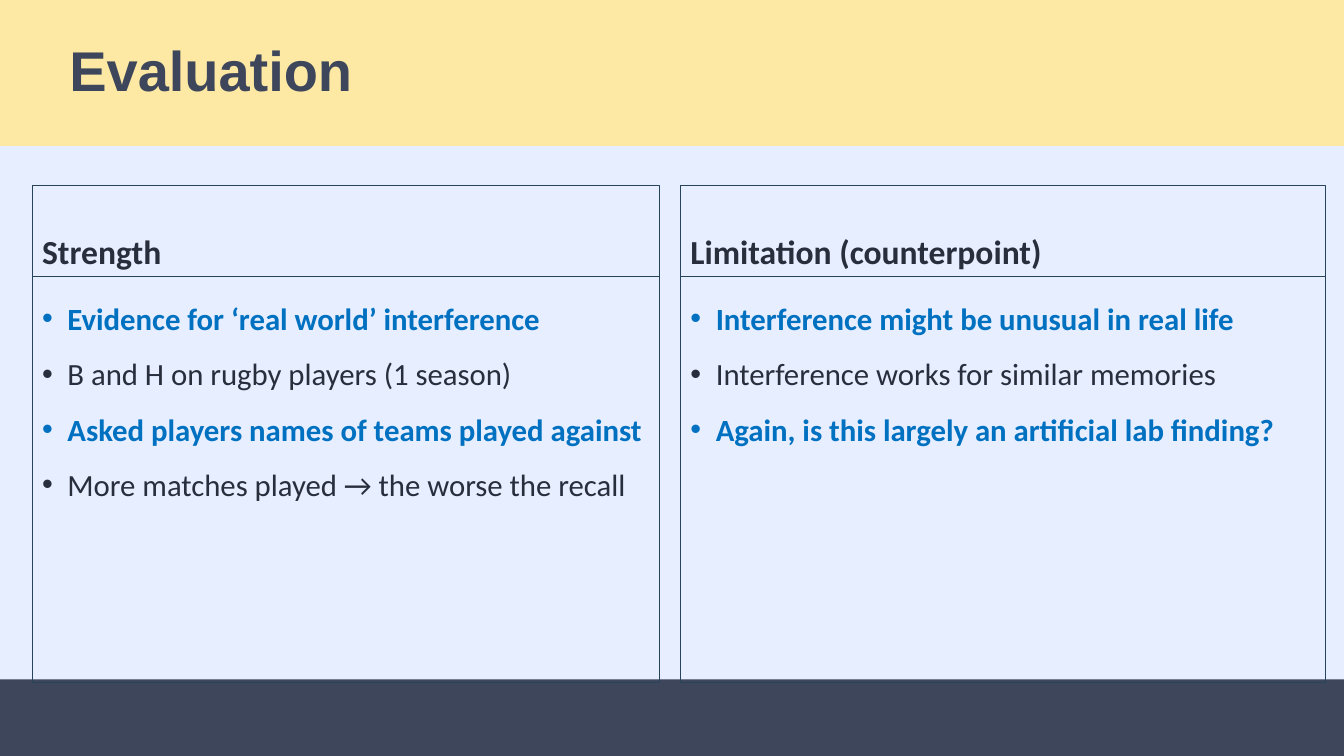
from dataclasses import dataclass

from lxml.etree import SubElement
from pptx import Presentation
from pptx.dml.color import RGBColor as Rgb
from pptx.enum.shapes import MSO_SHAPE as Form
from pptx.enum.text import MSO_ANCHOR as Anchor, PP_ALIGN as Align
from pptx.oxml.ns import qn
from pptx.util import Cm, Pt


@dataclass(frozen=True)
class Theme:
    back: str = "E6EEFF"
    band: str = "FEE9A4"
    slate: str = "3D465A"
    ink: str = "282E3C"
    blue: str = "0070C0"
    edge: str = "28445D"
    title: int = 40
    head: int = 24
    body: int = 22


THEME = Theme()
WIDE, HIGH = 33.87, 19.05
BAND_H, FOOT_Y = 3.68, 17.12
HEAD_Y, HEAD_H, LIST_H = 4.67, 2.29, 10.24

# Left edge, width, heading and points of each column
COLUMNS = [
    (0.81, 15.82, "Strength", [
        "Evidence for ‘real world’ interference",
        "B and H on rugby players (1 season)",
        "Asked players names of teams played against",
        "More matches played → the worse the recall",
    ]),
    (17.15, 16.26, "Limitation (counterpoint)", [
        "Interference might be unusual in real life",
        "Interference works for similar memories",
        "Again, is this largely an artificial lab finding?",
    ]),
]


def add_box(slide, left, top, width, height, fill=None, line=None):
    box = slide.shapes.add_shape(
        Form.RECTANGLE, Cm(left), Cm(top), Cm(width), Cm(height))
    box.shadow.inherit = False
    if fill:
        box.fill.solid()
        box.fill.fore_color.rgb = Rgb.from_string(fill)
    else:
        box.fill.background()
    if line:
        box.line.color.rgb = Rgb.from_string(line)
        box.line.width = Pt(0.75)
    else:
        box.line.fill.background()
    return box


def indent(para, left, hang=0, bullet=None):
    props = para._p.get_or_add_pPr()
    props.set("marL", str(Cm(left)))
    props.set("indent", str(Cm(-hang)))
    if bullet:
        SubElement(props, qn("a:buFont")).set("typeface", "Arial")
        SubElement(props, qn("a:buChar")).set("char", bullet)


def write(para, text, color, space=1.5, **look):
    """Fill one paragraph; look holds font attributes."""
    para.alignment = Align.LEFT
    para.line_spacing = space
    run = para.add_run()
    run.text = text
    for key, value in look.items():
        setattr(run.font, key, value)
    run.font.color.rgb = Rgb.from_string(color)


def add_title(slide, text):
    frame = add_box(slide, 0, 0, WIDE, BAND_H, fill=THEME.band).text_frame
    frame.vertical_anchor = Anchor.MIDDLE
    para = frame.paragraphs[0]
    indent(para, 1.5)
    write(para, text, THEME.slate, space=0.9,
          name="Arial", size=Pt(THEME.title), bold=True)


def add_head(slide, left, width, text):
    box = add_box(slide, left, HEAD_Y, width, HEAD_H, line=THEME.edge)
    frame = box.text_frame
    frame.vertical_anchor = Anchor.BOTTOM
    write(frame.paragraphs[0], text, THEME.ink,
          name="Calibri", size=Pt(THEME.head), bold=True)


def add_list(slide, left, width, points):
    """Bulleted box whose points alternate bold blue and plain."""
    box = add_box(slide, left, HEAD_Y + HEAD_H, width, LIST_H, line=THEME.edge)
    frame = box.text_frame
    frame.vertical_anchor = Anchor.TOP
    for i, text in enumerate(points):
        para = frame.add_paragraph() if i else frame.paragraphs[0]
        strong = i % 2 == 0
        indent(para, 0.64, hang=0.64, bullet="•")
        write(para, text, THEME.blue if strong else THEME.ink,
              name="Calibri", size=Pt(THEME.body), bold=strong)


def main():
    deck = Presentation()
    deck.slide_width, deck.slide_height = Cm(WIDE), Cm(HIGH)
    slide = deck.slides.add_slide(deck.slide_layouts[6])
    slide.background.fill.solid()
    slide.background.fill.fore_color.rgb = Rgb.from_string(THEME.back)

    add_box(slide, 0, FOOT_Y, WIDE, HIGH - FOOT_Y, fill=THEME.slate)
    add_title(slide, "Evaluation")
    for left, width, head, points in COLUMNS:
        add_head(slide, left, width, head)
        add_list(slide, left, width, points)
    deck.save("out.pptx")


if __name__ == "__main__":
    main()
